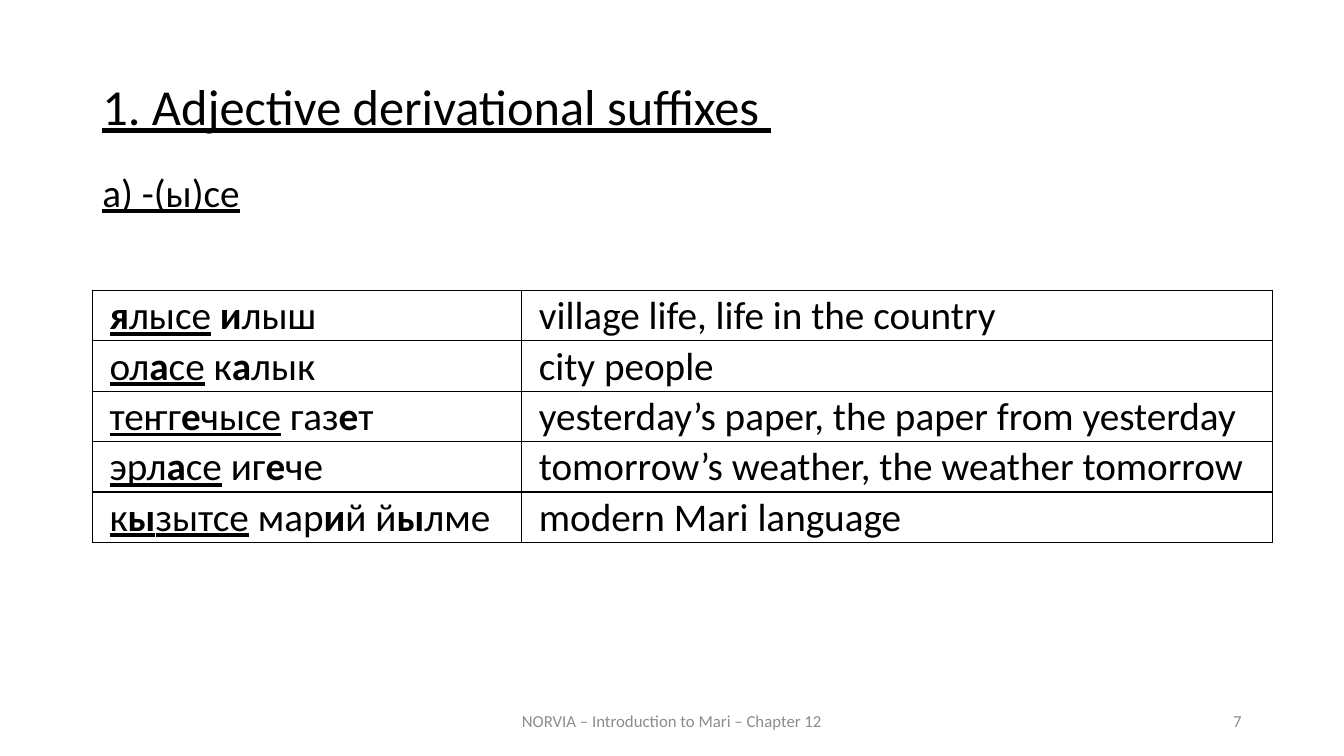
from lxml import etree
from pptx import Presentation
from pptx.dml.color import RGBColor
from pptx.enum.text import MSO_ANCHOR, PP_ALIGN
from pptx.oxml.ns import qn
from pptx.util import Cm, Pt

BLACK = RGBColor(0x00, 0x00, 0x00)
GREY = RGBColor(0x8C, 0x8C, 0x8C)
FONT = "Calibri"
LEFT, CENTER, RIGHT = PP_ALIGN.LEFT, PP_ALIGN.CENTER, PP_ALIGN.RIGHT
JUSTIFY = PP_ALIGN.JUSTIFY
TOP, MIDDLE = MSO_ANCHOR.TOP, MSO_ANCHOR.MIDDLE

COLUMN_WIDTHS = (10.82, 18.92)
ROW_HEIGHT = 1.27
THIN, THICK = 1, 1.5

# In marked text, _ switches underline and * switches bold.
PHRASES = [
    ("_*я*лысе_ *и*лыш", "village life, life in the country"),
    ("_ол*а*се_ к*а*лык", "city people"),
    ("_теҥг*е*чысе_ газ*е*т", "yesterday’s paper, the paper from yesterday"),
    ("_эрл*а*се_ иг*е*че", "tomorrow’s weather, the weather tomorrow"),
    ("_к*ы*зытсе_ мар*и*й й*ы*лме", "modern Mari language"),
]


def add_span(para, text, size, color, bold, underline):
    span = para.add_run()
    span.text = text
    span.font.name = FONT
    span.font.size = Pt(size)
    span.font.color.rgb = color
    span.font.bold = bold
    span.font.underline = underline


def add_marked_text(para, marked, size, color=BLACK):
    """Add runs, switching underline at each _ and bold at each *."""
    for part_index, part in enumerate(marked.split("_")):
        for piece_index, piece in enumerate(part.split("*")):
            if piece:
                add_span(para, piece, size, color,
                         piece_index % 2 == 1, part_index % 2 == 1)


def add_text(page, marked, place, size, color=BLACK, align=LEFT, anchor=TOP):
    box = page.shapes.add_textbox(*(Cm(length) for length in place))
    frame = box.text_frame
    frame.word_wrap = True
    frame.vertical_anchor = anchor
    para = frame.paragraphs[0]
    para.alignment = align
    add_marked_text(para, marked, size, color)
    return para


def add_heading(page, marked, place, size, space_before, align):
    para = add_text(page, marked, place, size, align=align)
    para.line_spacing = 0.9
    para.space_before = Pt(space_before)


def set_borders(cell, widths):
    """Draw the left, right, top and bottom borders, widths in points."""
    properties = cell._tc.get_or_add_tcPr()
    for index, (side, width) in enumerate(zip("LRTB", widths)):
        line = etree.Element(qn(f"a:ln{side}"), w=str(Pt(width)))
        fill = etree.SubElement(line, qn("a:solidFill"))
        etree.SubElement(fill, qn("a:srgbClr"), val=str(BLACK))
        properties.insert(index, line)


def fill_cell(cell, marked):
    cell.fill.background()
    cell.margin_left = cell.margin_right = Cm(0.43)
    cell.margin_top, cell.margin_bottom = Cm(0.05), Cm(0)
    para = cell.text_frame.paragraphs[0]
    para.alignment = JUSTIFY
    add_marked_text(para, marked, 28)


def add_phrase_table(page, left, top):
    row_count, column_count = len(PHRASES), len(COLUMN_WIDTHS)
    table = page.shapes.add_table(
        row_count, column_count, Cm(left), Cm(top),
        Cm(sum(COLUMN_WIDTHS)), Cm(ROW_HEIGHT * row_count)).table
    table.first_row = table.horz_banding = False
    for column, width in zip(table.columns, COLUMN_WIDTHS):
        column.width = Cm(width)
    for row_index, phrase in enumerate(PHRASES):
        table.rows[row_index].height = Cm(ROW_HEIGHT)
        for column_index, marked in enumerate(phrase):
            cell = table.cell(row_index, column_index)
            fill_cell(cell, marked)
            outer = (column_index == 0, column_index == column_count - 1,
                     row_index == 0, row_index == row_count - 1)
            set_borders(cell, [THICK if edge else THIN for edge in outer])


def main():
    deck = Presentation()
    deck.slide_width, deck.slide_height = Cm(33.87), Cm(19.05)
    page = deck.slides.add_slide(deck.slide_layouts[6])
    add_heading(page, "_1. Adjective derivational suffixes _",
                (2.33, 1.93, 29.21, 2.11), 36, 12, JUSTIFY)
    add_heading(page, "_a) -(ы)се_", (2.33, 4.24, 29.21, 1.47), 28, 10, LEFT)
    add_phrase_table(page, 2.33, 7.32)
    add_text(page, "NORVIA – Introduction to Mari – Chapter 12",
             (11.22, 17.65, 11.43, 1.02), 12, GREY, CENTER, MIDDLE)
    add_text(page, "7", (23.92, 17.65, 7.62, 1.02), 12, GREY, RIGHT, MIDDLE)
    deck.save("out.pptx")


if __name__ == "__main__":
    main()
